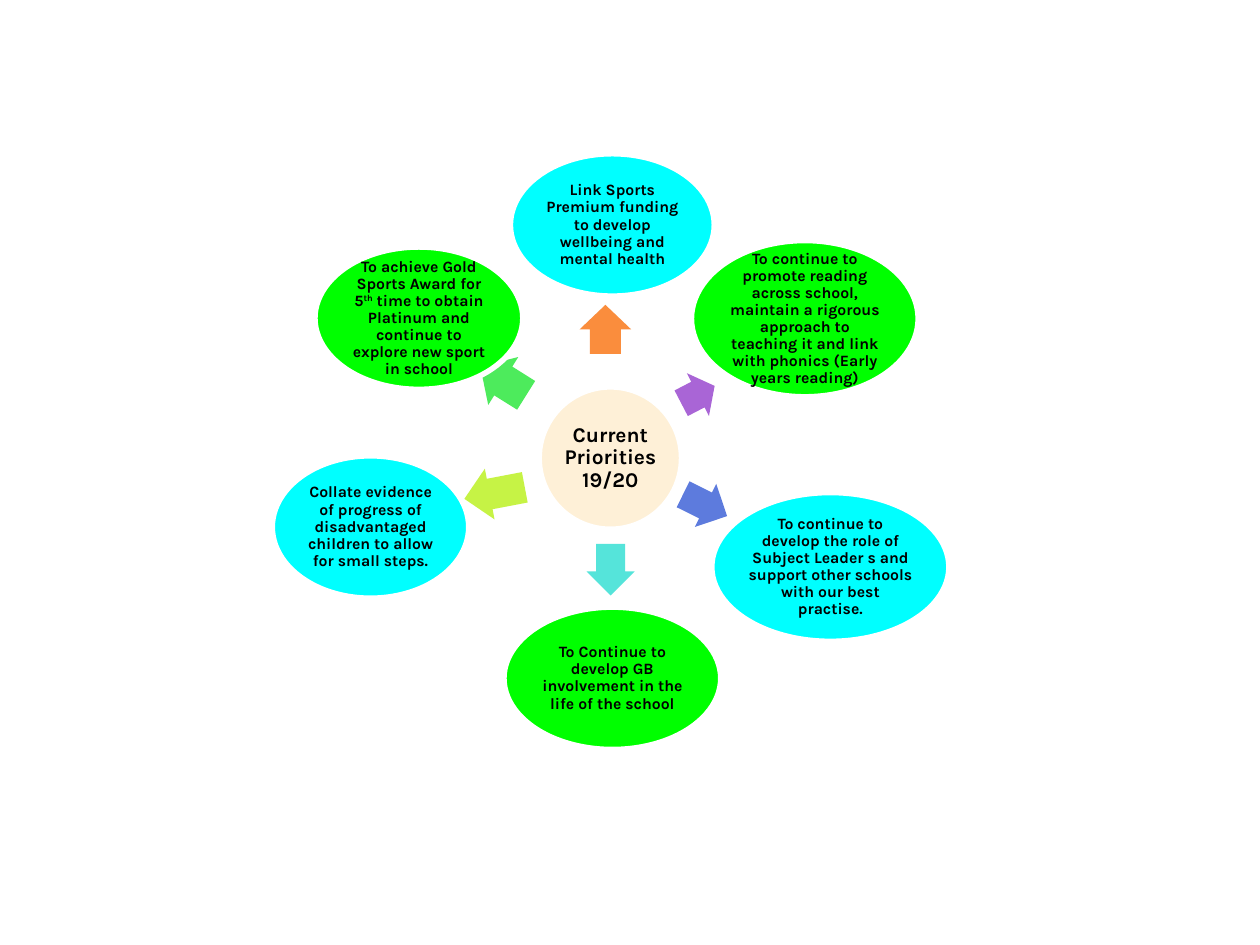
from pptx import Presentation
from pptx.dml.color import RGBColor
from pptx.enum.shapes import MSO_SHAPE
from pptx.enum.text import MSO_ANCHOR, PP_ALIGN
from pptx.util import Cm, Pt

OVAL, ARROW = MSO_SHAPE.OVAL, MSO_SHAPE.RIGHT_ARROW
MIDDLE, CENTER = MSO_ANCHOR.MIDDLE, PP_ALIGN.CENTER

COLORS = {
    "white": "FFFFFF", "black": "000000", "cream": "FEF0D7",
    "cyan": "00FFFF", "lime": "00FF00",
    "orange": "FA8D3D", "purple": "A965D6", "blue": "5D7BDD",
    "teal": "55E4DA", "yellow": "C6F345", "green": "4DEB5C",
}
FONT = "Karla"

# Boxes are (left, top, width, height) in cm; "^" marks superscript text.
HUB = (["Current Priorities 19/20"], (10.87, 7.8, 2.87, 2.87))

# Clockwise from the top: text, oval box, arrow box, arrow angle, arrow colour
PRIORITIES = [
    (["Link Sports Premium funding to develop wellbeing and mental health"],
     (10.29, 3.1, 4.11, 2.87), (11.71, 6.12, 0.99, 1.04), 270, "orange"),
    (["To continue to promote reading across school, maintain a rigorous "
      "approach to teaching it and link with phonics (Early years reading)"],
     (13.94, 4.85, 4.57, 3.15), (13.69, 7.47, 0.76, 0.97), 332.6, "purple"),
    (["To continue to develop the role of Subject Leader s and support other "
      "schools with our best practise."],
     (14.35, 9.93, 4.78, 3.0), (13.72, 9.7, 0.99, 0.97), 26.4, "blue"),
    (["To Continue to develop GB involvement in the life of the school"],
     (10.16, 12.24, 4.37, 2.87), (11.79, 11.0, 1.04, 0.97), 90, "teal"),
    (["Collate evidence of progress of disadvantaged children to allow for "
      "small steps."],
     (5.49, 9.19, 3.96, 2.87), (9.35, 9.42, 1.24, 1.04), 169.2, "yellow"),
    (["To achieve Gold Sports Award for 5", "^th",
      " time to obtain Platinum and continue to explore new sport in school"],
     (6.35, 4.98, 4.19, 2.87), (9.6, 7.11, 1.09, 1.14), 212.1, "green"),
]


def rgb(name):
    return RGBColor.from_string(COLORS[name])


def add_filled(slide, kind, box, color):
    shape = slide.shapes.add_shape(kind, *map(Cm, box))
    shape.shadow.inherit = False
    shape.fill.solid()
    shape.fill.fore_color.rgb = rgb(color)
    return shape


def add_oval(slide, pieces, box, color, size, margin):
    oval = add_filled(slide, OVAL, box, color)
    oval.line.color.rgb = rgb("white")
    oval.line.width = Pt(3.15)
    frame = oval.text_frame
    frame.word_wrap = True
    frame.vertical_anchor = MIDDLE
    frame.margin_left = frame.margin_right = Cm(margin)
    frame.margin_top = frame.margin_bottom = Cm(margin)
    paragraph = frame.paragraphs[0]
    paragraph.alignment = CENTER
    paragraph.line_spacing = 0.9
    font = paragraph.font
    font.name, font.size, font.bold = FONT, Pt(size), True
    font.color.rgb = rgb("black")
    for piece in pieces:
        run = paragraph.add_run()
        run.text = piece.lstrip("^")
        if piece.startswith("^"):
            run._r.get_or_add_rPr().set("baseline", "30000")


def add_arrow(slide, box, angle, color):
    arrow = add_filled(slide, ARROW, box, color)
    arrow.line.fill.background()
    arrow.adjustments[0] = 0.6
    arrow.adjustments[1] = 0.5
    arrow.rotation = angle


def main():
    prs = Presentation()
    prs.slide_width, prs.slide_height = Cm(25.4), Cm(19.05)
    slide = prs.slides.add_slide(prs.slide_layouts[6])
    add_oval(slide, *HUB, "cream", size=12, margin=0.05)
    for i, (pieces, oval_box, arrow_box, angle, color) in enumerate(PRIORITIES):
        add_arrow(slide, arrow_box, angle, color)
        add_oval(slide, pieces, oval_box, ("cyan", "lime")[i % 2],
                 size=9, margin=0.03)
    prs.save("out.pptx")


if __name__ == "__main__":
    main()
